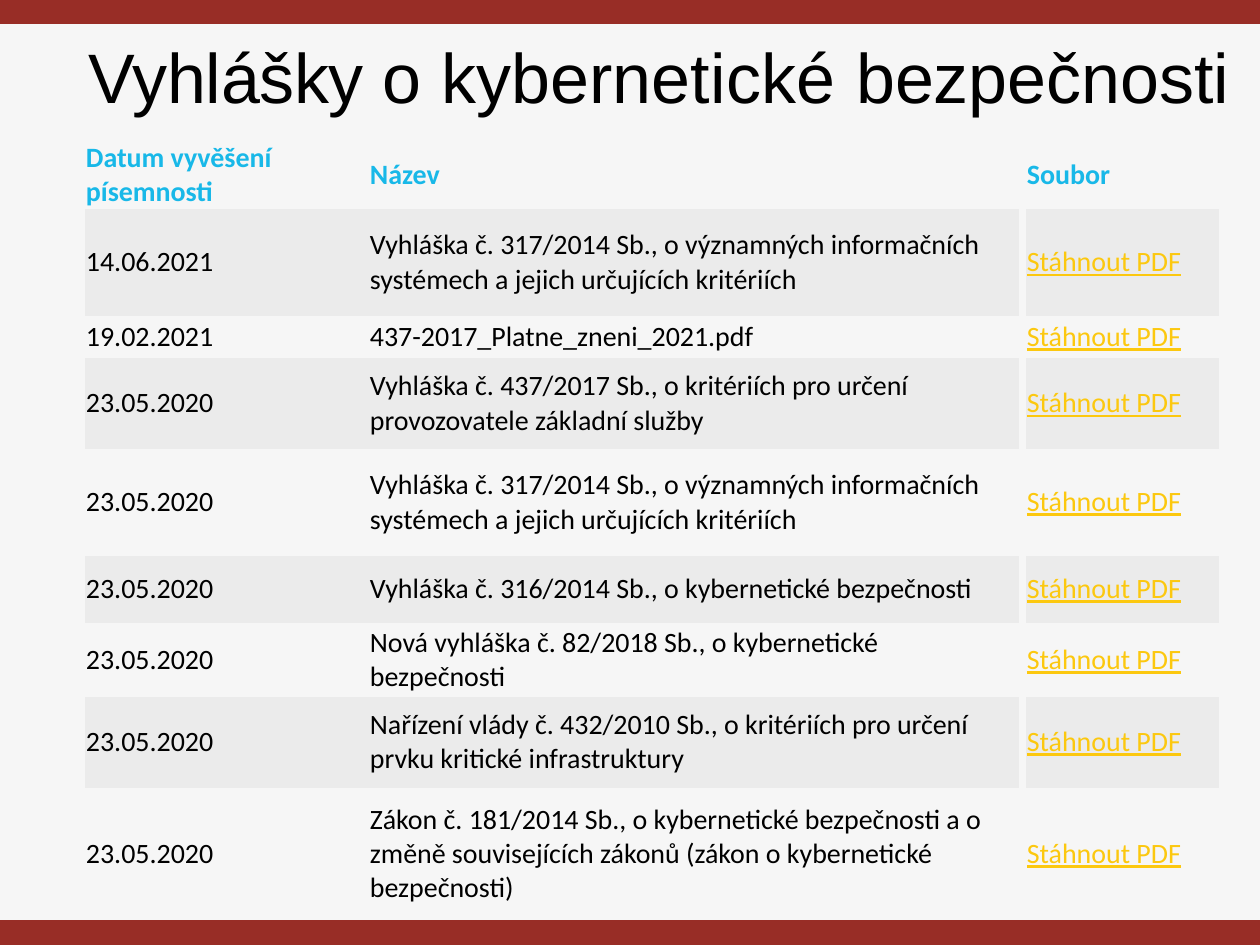
from dataclasses import dataclass

from lxml.etree import SubElement
from pptx import Presentation
from pptx.dml.color import RGBColor
from pptx.enum.shapes import MSO_SHAPE as Preset
from pptx.enum.text import MSO_ANCHOR as Anchor, MSO_AUTO_SIZE as AutoSize, PP_ALIGN as Align
from pptx.oxml.ns import qn
from pptx.slide import Slide
from pptx.table import Table, _Cell as Cell
from pptx.util import Emu, Pt

PX_PER_INCH = 126
SLIDE_WIDTH, SLIDE_HEIGHT = 1260, 945
BAR_HEIGHT = 23
BAR_TOPS = (0, 921)
COLORS = {
    "page": "F6F6F6",
    "bar": "982D26",
    "band": "EBEBEB",
    "header": "18B8E8",
    "text": "000000",
    "link": "FCC80F",
}
NO_STYLE = "{2D5ABB26-0587-4C30-8999-92F81FD0307C}"
TABLE_LEFT, TABLE_TOP = 85, 141
COLUMN_WIDTHS = (284, 650, 7, 193)
DATE_COLUMN, NAME_COLUMN, GAP_COLUMN, FILE_COLUMN = range(4)
HEADER_HEIGHT = 68
HEADERS = {
    DATE_COLUMN: "Datum vyvěšení písemnosti",
    NAME_COLUMN: "Název",
    FILE_COLUMN: "Soubor",
}
DOWNLOAD = "Stáhnout PDF"


@dataclass(frozen=True)
class TitlePart:
    text: str
    spacing: int


@dataclass(frozen=True)
class Decree:
    date: str
    name: str
    height: int


@dataclass(frozen=True)
class TextStyle:
    color: str
    bold: bool = False
    underline: bool = False


TITLE_PARTS = (
    TitlePart("Vyhlášky ", -20),
    TitlePart("o kybernetické ", 10),
    TitlePart("bezpečnosti", 0),
)
DECREES = (
    Decree("14.06.2021", "Vyhláška č. 317/2014 Sb., o významných informačních systémech a jejich určujících kritériích", 107),
    Decree("19.02.2021", "437-2017_Platne_zneni_2021.pdf", 42),
    Decree("23.05.2020", "Vyhláška č. 437/2017 Sb., o kritériích pro určení provozovatele základní služby", 91),
    Decree("23.05.2020", "Vyhláška č. 317/2014 Sb., o významných informačních systémech a jejich určujících kritériích", 107),
    Decree("23.05.2020", "Vyhláška č. 316/2014 Sb., o kybernetické bezpečnosti", 67),
    Decree("23.05.2020", "Nová vyhláška č. 82/2018 Sb., o kybernetické bezpečnosti", 74),
    Decree("23.05.2020", "Nařízení vlády č. 432/2010 Sb., o kritériích pro určení prvku kritické infrastruktury", 91),
    Decree("23.05.2020", "Zákon č. 181/2014 Sb., o kybernetické bezpečnosti a o změně souvisejících zákonů (zákon o kybernetické bezpečnosti)", 132),
)
HEADER_STYLE = TextStyle("header", bold=True)
BODY_STYLE = TextStyle("text")
LINK_STYLE = TextStyle("link", underline=True)


def px(length: int) -> Emu:
    return Emu(round(length * 914400 / PX_PER_INCH))


def color(name: str) -> RGBColor:
    return RGBColor.from_string(COLORS[name])


def draw_bar(page: Slide, top: int) -> None:
    bar = page.shapes.add_shape(Preset.RECTANGLE, 0, px(top), px(SLIDE_WIDTH), px(BAR_HEIGHT))
    bar.shadow.inherit = False
    bar.fill.solid()
    bar.fill.fore_color.rgb = color("bar")
    bar.line.color.rgb = color("bar")
    bar.line.width = Pt(1)


def draw_title(page: Slide) -> None:
    title = page.shapes.title
    title.left, title.top, title.width, title.height = px(89), px(31), px(1147), px(88)
    box = title.text_frame
    box.margin_left = box.margin_right = box.margin_bottom = 0
    box.margin_top = px(2)
    box.vertical_anchor = Anchor.MIDDLE
    box.word_wrap = True
    box.auto_size = AutoSize.SHAPE_TO_FIT_TEXT
    para = box.paragraphs[0]
    para.alignment = Align.LEFT
    para.space_before = Pt(1.1)
    for part in TITLE_PARTS:
        span = para.add_run()
        span.text = part.text
        span.font.name = "Arial"
        span.font.size = Pt(40)
        span.font.color.rgb = color("text")
        span.font._element.set("spc", str(part.spacing))


def write_cell(cell: Cell, text: str, style: TextStyle) -> None:
    span = cell.text_frame.paragraphs[0].add_run()
    span.text = text
    span.font.name = "Calibri"
    span.font.size = Pt(16)
    span.font.bold = style.bold
    span.font.underline = style.underline
    span.font.color.rgb = color(style.color)


def format_cell(cell: Cell, banded: bool) -> None:
    cell.margin_left = cell.margin_right = px(1)
    cell.margin_top = cell.margin_bottom = 0
    cell.vertical_anchor = Anchor.MIDDLE
    if banded:
        cell.fill.solid()
        cell.fill.fore_color.rgb = color("band")
    else:
        cell.fill.background()


def clear_style(table: Table) -> None:
    table.first_row = table.horz_banding = False
    properties = table._tbl.tblPr
    style = properties.find(qn("a:tableStyleId"))
    if style is None:
        style = SubElement(properties, qn("a:tableStyleId"))
    style.text = NO_STYLE


def draw_table(page: Slide) -> None:
    heights = (HEADER_HEIGHT, *(decree.height for decree in DECREES))
    table = page.shapes.add_table(
        len(heights), len(COLUMN_WIDTHS), px(TABLE_LEFT), px(TABLE_TOP),
        px(sum(COLUMN_WIDTHS)), px(sum(heights)),
    ).table
    clear_style(table)
    for column, width in zip(table.columns, COLUMN_WIDTHS):
        column.width = px(width)
    for index, (row, height) in enumerate(zip(table.rows, heights)):
        row.height = px(height)
        for number, cell in enumerate(row.cells):
            format_cell(cell, index % 2 == 1 and number != GAP_COLUMN)
    for number, text in HEADERS.items():
        write_cell(table.cell(0, number), text, HEADER_STYLE)
    for index, decree in enumerate(DECREES, start=1):
        write_cell(table.cell(index, DATE_COLUMN), decree.date, BODY_STYLE)
        write_cell(table.cell(index, NAME_COLUMN), decree.name, BODY_STYLE)
        write_cell(table.cell(index, FILE_COLUMN), DOWNLOAD, LINK_STYLE)
    table.cell(0, GAP_COLUMN).merge(table.cell(len(DECREES), GAP_COLUMN))


def main() -> None:
    deck = Presentation()
    deck.slide_width, deck.slide_height = px(SLIDE_WIDTH), px(SLIDE_HEIGHT)
    page = deck.slides.add_slide(deck.slide_layouts.get_by_name("Title Only"))
    page.background.fill.solid()
    page.background.fill.fore_color.rgb = color("page")
    for top in BAR_TOPS:
        draw_bar(page, top)
    draw_title(page)
    draw_table(page)
    deck.save("out.pptx")


if __name__ == "__main__":
    main()
